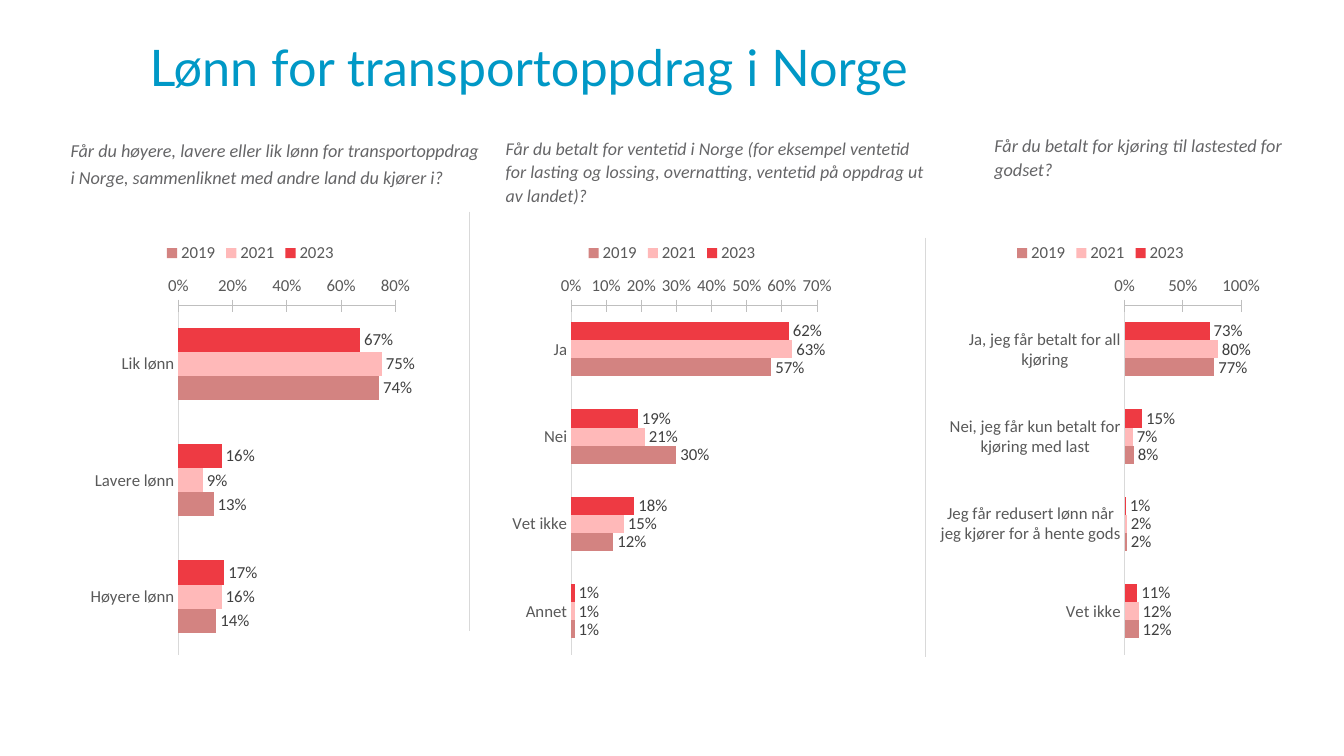
from dataclasses import dataclass

from lxml import etree
from pptx import Presentation
from pptx import util as u
from pptx.chart.data import CategoryChartData
from pptx.dml.color import RGBColor
from pptx.enum import chart as kinds
from pptx.enum import shapes
from pptx.oxml import ns


@dataclass(frozen=True)
class Theme:
    head: str = "Lato"
    body: str = "Calibri"
    title: str = "0098C6"
    ask: str = "656567"
    axis: str = "595959"
    label: str = "404040"
    rule: str = "D9D9D9"
    scale: str = "BFBFBF"
    bars: tuple = ("EE3A43", "FFB9B9", "D38381")
    big: float = 36
    mid: float = 13
    snug: float = 12.8
    small: float = 12
    base: float = 10
    thin: float = 0.75


T = Theme()
WIDE, HIGH = u.Inches(13.33), u.Inches(7.5)
COLS, ROWS = 160, 90
YEARS = ("2023", "2021", "2019")
TOP, SPAN, DEEP = 27.6, 39.6, 51.4

ASKS = (
    ("Får du høyere, lavere eller lik lønn for transportoppdrag i Norge, "
     "sammenliknet med andre land du kjører i?",
     (8.4, 16.1, 49.3, 12.2), T.mid, 1.2, (0, 0)),
    ("Får du betalt for ventetid i Norge (for eksempel ventetid for lasting "
     "og lossing, overnatting, ventetid på oppdrag ut av landet)?",
     (60.2, 16.1, 50.8, 8.6), T.snug, 1.1, (0, 0)),
    ("Får du betalt for kjøring til lastested for godset?",
     (117.2, 15.1, 39.1, 10.7), T.mid, 1.1, (0.1, 0.05)),
)

CHARTS = (
    (10, 0.8, 0.2, {
        "Lik lønn": (0.67, 0.75, 0.74),
        "Lavere lønn": (0.16, 0.09, 0.13),
        "Høyere lønn": (0.17, 0.16, 0.14),
    }),
    (60.2, 0.7, 0.1, {
        "Ja": (0.62, 0.63, 0.57),
        "Nei": (0.19, 0.21, 0.3),
        "Vet ikke": (0.18, 0.15, 0.12),
        "Annet": (0.01, 0.01, 0.01),
    }),
    (111.2, 1, 0.5, {
        "Ja, jeg får betalt for all kjøring": (0.73, 0.8, 0.77),
        "Nei, jeg får kun betalt for kjøring med last": (0.15, 0.07, 0.08),
        "Jeg får redusert lønn når jeg kjører for å hente gods":
            (0.01, 0.02, 0.02),
        "Vet ikke": (0.11, 0.12, 0.12),
    }),
)

RULES = ((55.9, 25.2), (110.2, 28.3))
DROP = 49.9


def col(n):
    return round(WIDE * n / COLS)


def row(n):
    return round(HIGH * n / ROWS)


def area(x, y, w, h):
    return col(x), row(y), col(w), row(h)


def style(font, size, tint, face=T.body):
    font.name = face
    font.size = u.Pt(size)
    font.color.rgb = RGBColor.from_string(tint)


def stroke(line, tint):
    line.color.rgb = RGBColor.from_string(tint)
    line.width = u.Pt(T.thin)


def write(slide, words, box, pad):
    frame = slide.shapes.add_textbox(*area(*box)).text_frame
    frame.word_wrap = True
    frame.margin_left = frame.margin_right = u.Inches(pad[0])
    frame.margin_top = frame.margin_bottom = u.Inches(pad[1])
    frame.text = words
    return frame.paragraphs[0]


def title(slide, words):
    para = write(slide, words, (17.8, 3.7, 135.6, 15), (0, 0.05))
    style(para.runs[0].font, T.big, T.title, T.head)


def ask(slide, words, box, size, pitch, pad):
    para = write(slide, words, box, pad)
    para.line_spacing = pitch
    para.space_after = u.Pt(8)
    font = para.runs[0].font
    style(font, size, T.ask)
    font.italic = True


def rule(slide, x, y):
    line = slide.shapes.add_connector(
        shapes.MSO_CONNECTOR.STRAIGHT, col(x), row(y), col(x), row(y + DROP))
    stroke(line.line, T.rule)
    etree.SubElement(line._element.spPr, ns.qn("a:effectLst"))


def axes(chart, peak, step):
    cats, vals = chart.category_axis, chart.value_axis
    for axis, tint in ((cats, T.rule), (vals, T.scale)):
        style(axis.tick_labels.font, T.small, T.axis)
        stroke(axis.format.line, tint)
        axis.has_major_gridlines = False
        axis.minor_tick_mark = kinds.XL_TICK_MARK.NONE
    cats.reverse_order = True
    cats.major_tick_mark = kinds.XL_TICK_MARK.NONE
    vals.major_tick_mark = kinds.XL_TICK_MARK.CROSS
    vals.minimum_scale, vals.maximum_scale = 0, peak
    vals.major_unit = step
    vals.tick_labels.number_format = "0%"
    vals.tick_labels.number_format_is_linked = False


def bars(slide, x, peak, step, rows):
    data = CategoryChartData(number_format="0%")
    data.categories = list(rows)
    for year, vals in zip(YEARS, zip(*rows.values())):
        data.add_series(year, vals)
    chart = slide.shapes.add_chart(
        kinds.XL_CHART_TYPE.BAR_CLUSTERED, *area(x, TOP, SPAN, DEEP),
        data).chart
    style(chart.font, T.base, "000000")
    chart.has_title = False
    chart.has_legend = True
    chart.legend.position = kinds.XL_LEGEND_POSITION.TOP
    chart.legend.include_in_layout = False
    style(chart.legend.font, T.small, T.axis)
    axes(chart, peak, step)
    plot = chart.plots[0]
    plot.gap_width = 182
    plot.vary_by_categories = False
    for item, tint in zip(plot.series, T.bars):
        item.format.fill.solid()
        item.format.fill.fore_color.rgb = RGBColor.from_string(tint)
        tags = item.data_labels
        tags.show_value = True
        tags.position = kinds.XL_LABEL_POSITION.OUTSIDE_END
        tags.number_format = "0%"
        tags.number_format_is_linked = False
        style(tags.font, T.small, T.label)


def main():
    deck = Presentation()
    deck.slide_width, deck.slide_height = WIDE, HIGH
    slide = deck.slides.add_slide(deck.slide_layouts[6])
    title(slide, "Lønn for transportoppdrag i Norge")
    for item in ASKS:
        ask(slide, *item)
    for item in RULES:
        rule(slide, *item)
    for item in CHARTS:
        bars(slide, *item)
    deck.save("out.pptx")


if __name__ == "__main__":
    main()
